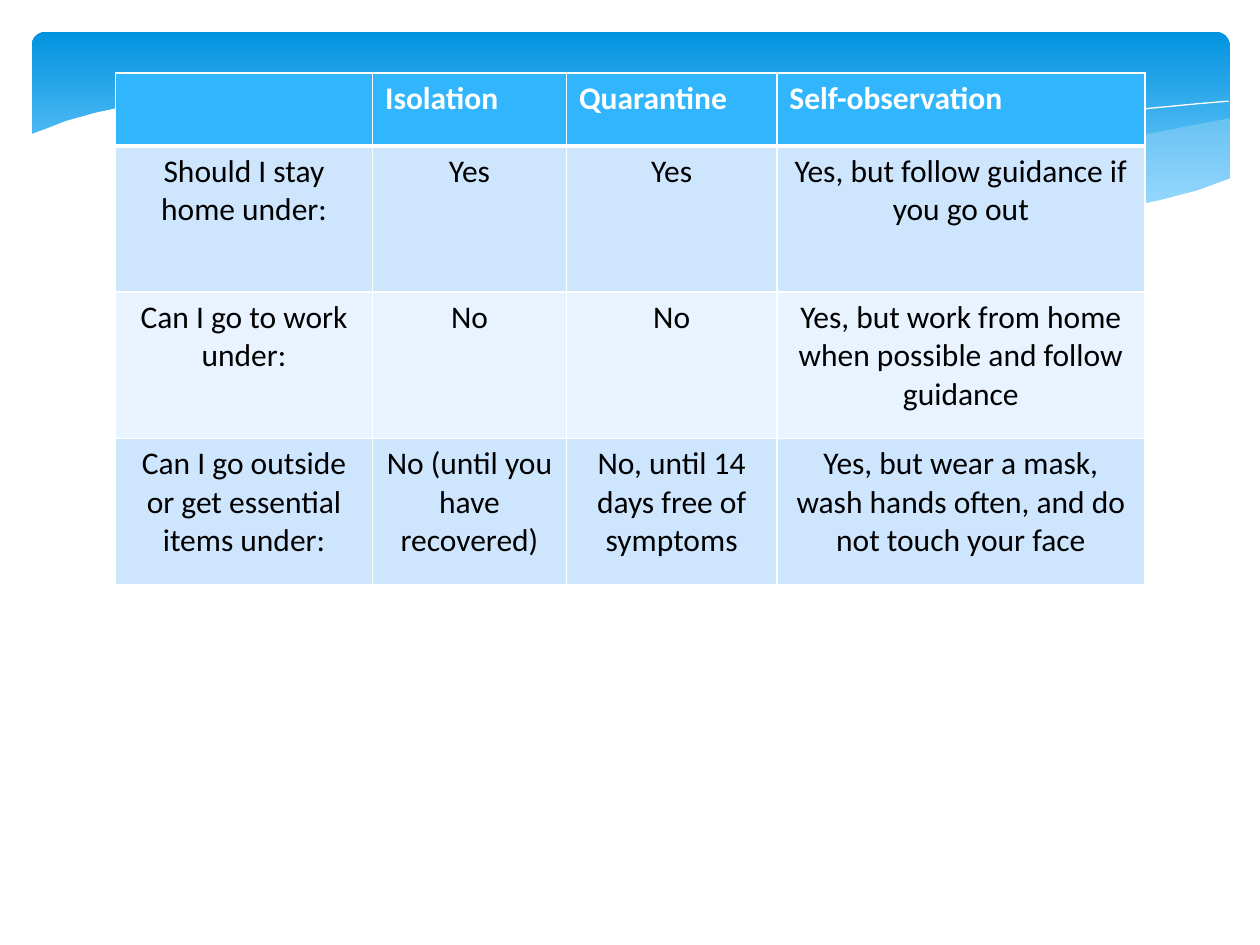
from lxml import etree
from pptx import Presentation
from pptx import util as u
from pptx.dml.color import RGBColor
from pptx.enum import shapes, text
from pptx.oxml.ns import qn

WHITE = RGBColor(0xFF, 0xFF, 0xFF)
BLACK = RGBColor(0, 0, 0)
DEEP = RGBColor(0x02, 0x93, 0xE0)
SKY = RGBColor(0x83, 0xD3, 0xFE)
MIST = RGBColor(0xC6, 0xE7, 0xFC)
HEAD = RGBColor(0x31, 0xB6, 0xFD)
ROWS = [RGBColor(0xE8, 0xF3, 0xFF), RGBColor(0xCE, 0xE5, 0xFE)]

BAND = (0.64, 0.64, 24.15, 3.96)
GRID = (2.33, 1.47, 20.75, 10.34)
COLS = [5.18, 3.91, 4.24, 7.42]
TALL = [1.47, 2.95, 2.95, 2.95]

CELLS = [
    ["", "Isolation", "Quarantine", "Self-observation"],
    ["Should I stay home under:", "Yes", "Yes",
     "Yes, but follow guidance if you go out"],
    ["Can I go to work under:", "No", "No",
     "Yes, but work from home when possible and follow guidance"],
    ["Can I go outside or get essential items under:",
     "No (until you have recovered)", "No, until 14 days free of symptoms",
     "Yes, but wear a mask, wash hands often, and do not touch your face"],
]

RIGHT = [
    (24.13, 1.75), (23.44, 1.88), (22.76, 2.01), (22, 2.16), (21.23, 2.36),
    (19.81, 2.69), (18.49, 3), (17.3, 3.23), (16.15, 3.43), (17.27, 3.56),
    (18.29, 3.66), (19.48, 3.73), (20.57, 3.73), (21.51, 3.66),
    (22.35, 3.51), (23.11, 3.33), (23.83, 3.1), (24.16, 2.95), (24.16, 1.75)]
MIDDLE = [
    (22.05, 3.61), (20.62, 3.4), (19.05, 3.15), (17.3, 2.77), (15.34, 2.31),
    (13.82, 1.96), (12.42, 1.7), (11.18, 1.55), (10.03, 1.45), (9.02, 1.4),
    (8.1, 1.4), (7.32, 1.45), (6.63, 1.55), (7.57, 1.65), (8.56, 1.83),
    (9.63, 2.06), (10.77, 2.31), (12.83, 2.79), (14.63, 3.18),
    (16.26, 3.45), (17.7, 3.63), (19, 3.73), (20.14, 3.76), (21.13, 3.71)]
CREST = [
    (7.21, 1.65), (7.7, 1.55), (8.59, 1.47), (9.93, 1.42), (11.28, 1.47),
    (12.9, 1.6), (14.81, 1.85), (17.02, 2.26), (19.56, 2.82), (22.4, 3.58)]
RISE = [
    (14.94, 3.2), (15.95, 2.95), (17.65, 2.51), (19.84, 2.01),
    (21.36, 1.73), (22.48, 1.55), (23.52, 1.45), (24.13, 1.4)]
FRONT = [
    (24.18, 2.95), (23.5, 3.2), (22.73, 3.4), (21.89, 3.58), (20.96, 3.68),
    (19.91, 3.71), (18.69, 3.68), (17.35, 3.56), (15.82, 3.33),
    (14.07, 3.02), (12.14, 2.62), (10.72, 2.26), (9.3, 1.96), (8, 1.7),
    (6.78, 1.52), (5.72, 1.42), (4.72, 1.35), (3.86, 1.35), (3.07, 1.37),
    (2.06, 1.47), (1.3, 1.63), (0.69, 1.8), (0.28, 1.96), (-0.05, 2.08),
    (-0.05, 5.05), (24.18, 5.05)]


def wave(slide, box, dots, fill=None, alpha=100):
    """Draw a filled wave, or a white hairline when no fill is given."""
    spots = [(u.Cm(box[0] + x), u.Cm(box[1] + y)) for x, y in dots]
    pen = slide.shapes.build_freeform(*spots[0])
    pen.add_line_segments(spots[1:], close=fill is not None)
    shape = pen.convert_to_shape()
    shape.shadow.inherit = False
    if fill is None:
        shape.fill.background()
        shape.line.color.rgb = WHITE
        shape.line.width = u.Pt(0)
        return
    shape.line.fill.background()
    shape.fill.solid()
    shape.fill.fore_color.rgb = fill
    if alpha < 100:
        tint = next(shape._element.spPr.iter(qn("a:srgbClr")))
        etree.SubElement(tint, qn("a:alpha"), val=str(alpha * 1000))


def banner(slide, box):
    """Draw the rounded gradient band and the waves across its foot."""
    band = slide.shapes.add_shape(
        shapes.MSO_SHAPE.ROUNDED_RECTANGLE, *map(u.Cm, box))
    band.adjustments[0] = 0.07
    band.shadow.inherit = False
    band.line.fill.background()
    band.fill.gradient()
    band.fill.gradient_angle = 270
    for stop, tone, place in zip(band.fill.gradient_stops, (DEEP, SKY), (0, 0.9)):
        stop.color.rgb = tone
        stop.position = place
    wave(slide, box, RIGHT, MIST, 29)
    wave(slide, box, MIDDLE, MIST, 40)
    wave(slide, box, CREST)
    wave(slide, box, RISE)
    wave(slide, box, FRONT, WHITE)


def edge(cell, sides):
    """Give a cell white borders, with a width in points for each side."""
    props = cell._tc.get_or_add_tcPr()
    for side, width in sides.items():
        line = etree.SubElement(props, qn("a:ln" + side), w=str(u.Pt(width)))
        fill = etree.SubElement(line, qn("a:solidFill"))
        etree.SubElement(fill, qn("a:srgbClr"), val=str(WHITE))


def style(cell, words, row):
    """Fill one cell and format its words as header or body."""
    top = row == 0
    edge(cell, {"L": 1, "R": 1, "T": 3 if row == 1 else 1, "B": 3 if top else 1})
    cell.fill.solid()
    cell.fill.fore_color.rgb = HEAD if top else ROWS[row % 2]
    if not words:
        return
    para = cell.text_frame.paragraphs[0]
    para.alignment = text.PP_ALIGN.LEFT if top else text.PP_ALIGN.CENTER
    run = para.add_run()
    run.text = words
    form = {"name": "Calibri", "size": u.Pt(18), "bold": top}
    for key, value in form.items():
        setattr(run.font, key, value)
    run.font.color.rgb = WHITE if top else BLACK


def grid(slide, box):
    """Place the guidance table in its box."""
    table = slide.shapes.add_table(
        len(CELLS), len(COLS), *map(u.Cm, box)).table
    for col, wide in zip(table.columns, COLS):
        col.width = u.Cm(wide)
    for row, tall in zip(table.rows, TALL):
        row.height = u.Cm(tall)
    for r, line in enumerate(CELLS):
        for c, words in enumerate(line):
            style(table.cell(r, c), words, r)


def main():
    """Build the slide and save it."""
    deck = Presentation()
    deck.slide_width, deck.slide_height = u.Cm(25.4), u.Cm(19.05)
    slide = deck.slides.add_slide(deck.slide_layouts[6])
    banner(slide, BAND)
    grid(slide, GRID)
    deck.save("out.pptx")


if __name__ == "__main__":
    main()
